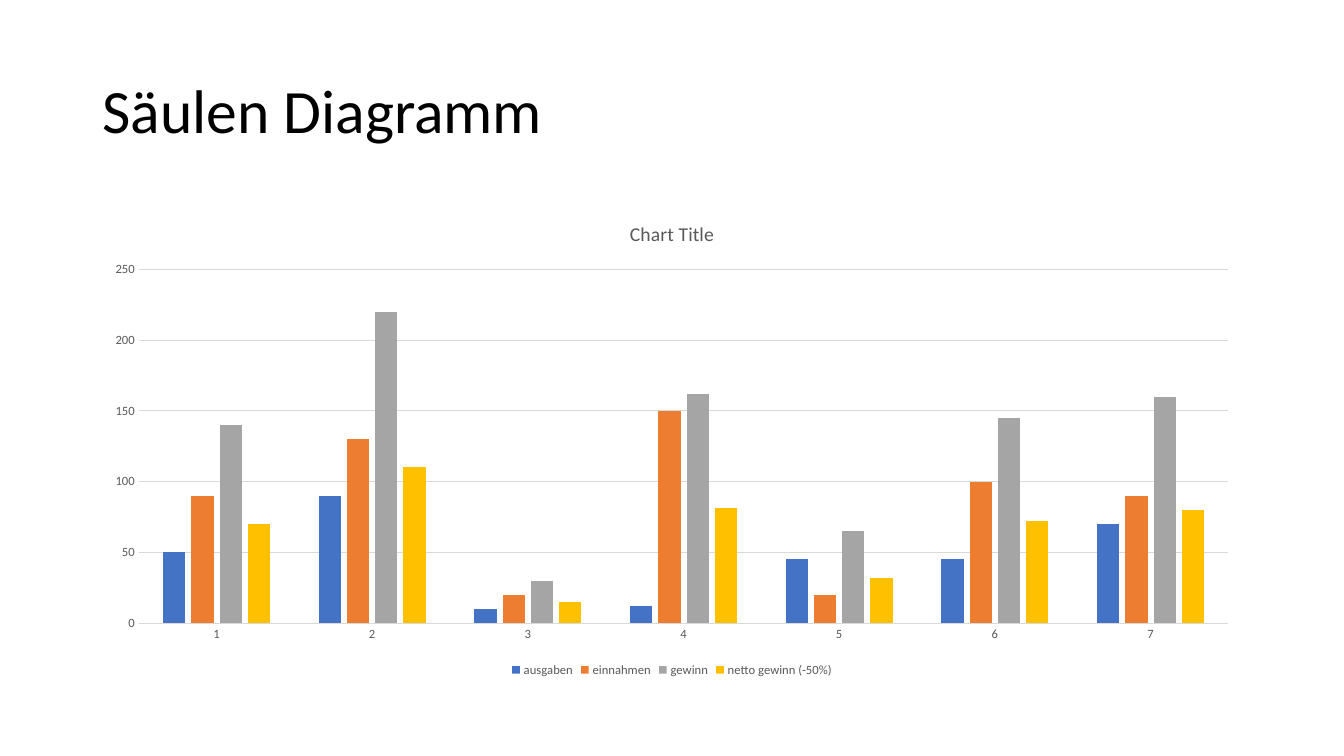
from pptx import Presentation
from pptx.chart.data import CategoryChartData
from pptx.dml.color import RGBColor
from pptx.enum import chart as ch, text as tx
from pptx.util import Pt

# Content
TITLE = "Säulen Diagramm"
HEAD = "Chart Title"
CATS = ["1", "2", "3", "4", "5", "6", "7"]
SERIES = [
    ("ausgaben", "4472C4", [50, 90, 10, 12, 45, 45, 70]),
    ("einnahmen", "ED7D31", [90, 130, 20, 150, 20, 100, 90]),
    ("gewinn", "A5A5A5", [140, 220, 30, 162, 65, 145, 160]),
    ("netto gewinn (-50%)", "FFC000", [70, 110, 15, 81, 32, 72, 80]),
]
FACE, BLACK, GREY, PALE = "Calibri", "000000", "595959", "D9D9D9"
LEFT, WIDTH = Pt(66), Pt(828)


def tint(color, code):
    color.rgb = RGBColor.from_string(code)


def style(font, size, code):
    font.name, font.size, font.bold = FACE, Pt(size), False
    tint(font.color, code)


def rule(line):
    line.width = Pt(0.75)
    line.fill.solid()
    tint(line.color, PALE)


deck = Presentation()
deck.slide_width, deck.slide_height = Pt(960), Pt(540)
slide = deck.slides.add_slide(deck.slide_layouts[5])

# Title
title = slide.shapes.title
title.left, title.top, title.width, title.height = LEFT, Pt(28.8), WIDTH, Pt(104.4)
frame = title.text_frame
frame.text = TITLE
frame.word_wrap = True
frame.auto_size = tx.MSO_AUTO_SIZE.NONE
frame.vertical_anchor = tx.MSO_ANCHOR.MIDDLE
para = frame.paragraphs[0]
para.alignment = tx.PP_ALIGN.LEFT
para.line_spacing = 0.9
style(para.font, 44, BLACK)

# Chart
data = CategoryChartData()
data.categories = CATS
for name, _, vals in SERIES:
    data.add_series(name, vals)
chart = slide.shapes.add_chart(
    ch.XL_CHART_TYPE.COLUMN_CLUSTERED, LEFT, Pt(144), WIDTH, Pt(342.7), data
).chart
style(chart.font, 10, BLACK)

# Chart heading
chart.has_title = True
chart.chart_title.include_in_layout = False
head = chart.chart_title.text_frame
head.text = HEAD
style(head.paragraphs[0].font, 14, GREY)

# Columns
plot = chart.plots[0]
plot.gap_width, plot.overlap = 219, -27
plot.vary_by_categories = False
for bars, (_, code, _) in zip(plot.series, SERIES):
    bars.format.fill.solid()
    tint(bars.format.fill.fore_color, code)
    bars.invert_if_negative = False

# Axes
for axis in (chart.category_axis, chart.value_axis):
    axis.major_tick_mark = axis.minor_tick_mark = ch.XL_TICK_MARK.NONE
    style(axis.tick_labels.font, 9, GREY)
rule(chart.category_axis.format.line)
chart.value_axis.format.line.fill.background()
chart.value_axis.has_major_gridlines = True
rule(chart.value_axis.major_gridlines.format.line)

# Legend
chart.has_legend = True
chart.legend.position = ch.XL_LEGEND_POSITION.BOTTOM
chart.legend.include_in_layout = False
style(chart.legend.font, 9, GREY)

deck.save("out.pptx")
